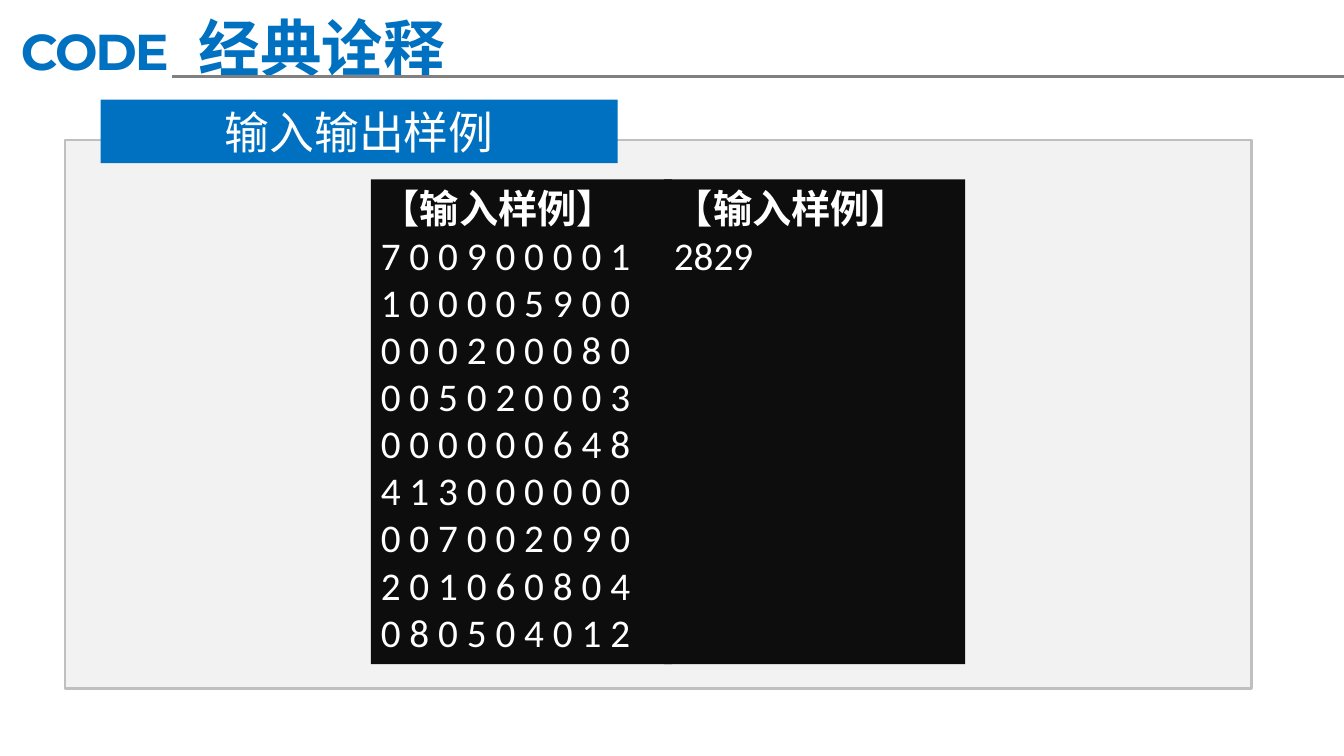
from lxml import etree
from pptx import Presentation
from pptx.dml.color import RGBColor
from pptx.enum import shapes, text
from pptx.oxml import ns
from pptx.util import Cm, Pt

BLUE = RGBColor(0x00, 0x70, 0xC0)
WHITE = RGBColor(0xFF, 0xFF, 0xFF)
PANEL = RGBColor(0xF2, 0xF2, 0xF2)
EDGE = RGBColor(0xBF, 0xBF, 0xBF)
RULE = RGBColor(0x80, 0x80, 0x80)
DARK = RGBColor(0x0D, 0x0D, 0x0D)
CJK = "Noto Sans CJK SC"

LABEL = "CODE"
TITLE = "经典诠释"
HEADING = "输入输出样例"
SAMPLES = [
    ["【输入样例】",
     "7 0 0 9 0 0 0 0 1",
     "1 0 0 0 0 5 9 0 0",
     "0 0 0 2 0 0 0 8 0",
     "0 0 5 0 2 0 0 0 3",
     "0 0 0 0 0 0 6 4 8",
     "4 1 3 0 0 0 0 0 0",
     "0 0 7 0 0 2 0 9 0",
     "2 0 1 0 6 0 8 0 4",
     "0 8 0 5 0 4 0 1 2"],
    ["【输入样例】", "2829"],
]
SAMPLE_LEFT, SAMPLE_STEP = 9.35, 7.39


def write(sp, lines, font, size, color, bold_lines=0,
          align=text.PP_ALIGN.LEFT, anchor=text.MSO_ANCHOR.TOP):
    tf = sp.text_frame
    tf.text = "\n".join(lines)
    tf.word_wrap = True
    tf.auto_size = text.MSO_AUTO_SIZE.NONE
    tf.vertical_anchor = anchor
    for i, p in enumerate(tf.paragraphs):
        p.alignment = align
        r = p.runs[0]
        r.font.name = font
        r.font.size = Pt(size)
        r.font.bold = i < bold_lines
        r.font.color.rgb = color
        ea = etree.SubElement(r.font._element, ns.qn("a:ea"))
        ea.set("typeface", font)
    return tf


def add_box(s, left, top, width, height, fill, edge=None):
    sp = s.shapes.add_shape(shapes.MSO_SHAPE.RECTANGLE,
                            Cm(left), Cm(top), Cm(width), Cm(height))
    sp.shadow.inherit = False
    sp.fill.solid()
    sp.fill.fore_color.rgb = fill
    if edge is None:
        sp.line.fill.background()
    else:
        sp.line.color.rgb = edge
        sp.line.width = Pt(1.5)
    return sp


def add_header(s):
    sp = s.shapes.add_textbox(Cm(0.2), Cm(0.33), Cm(4.72), Cm(1.88))
    tf = write(sp, [LABEL], "Montserrat", 36, BLUE, 1)
    tf.margin_left = tf.margin_right = Cm(0.33)
    tf.margin_top = tf.margin_bottom = Cm(0.18)
    tf.paragraphs[0].runs[0].font._element.set("spc", "-150")

    rule = s.shapes.add_connector(shapes.MSO_CONNECTOR.STRAIGHT,
                                  Cm(4.34), Cm(1.93), Cm(33.88), Cm(1.93))
    rule.line.color.rgb = RULE
    rule.line.width = Pt(2)
    etree.SubElement(rule._element.spPr, ns.qn("a:effectLst"))

    title = s.shapes.title
    title.left, title.top, title.width, title.height = (
        Cm(4.75), Cm(0.13), Cm(11.99), Cm(2.13))
    write(title, [TITLE], CJK, 44, BLUE, 1)


def main():
    prs = Presentation()
    prs.slide_width, prs.slide_height = Cm(33.88), Cm(19.05)
    s = prs.slides.add_slide(prs.slide_layouts[5])
    add_header(s)
    add_box(s, 1.63, 3.53, 29.92, 13.82, PANEL, EDGE)
    heading = add_box(s, 2.54, 2.51, 13.03, 1.6, BLUE)
    write(heading, [HEADING], CJK, 32, WHITE,
          align=text.PP_ALIGN.CENTER, anchor=text.MSO_ANCHOR.MIDDLE)
    for i, lines in enumerate(SAMPLES):
        sample = add_box(s, SAMPLE_LEFT + i * SAMPLE_STEP, 4.52, 7.59, 12.22, DARK)
        write(sample, lines, "Calibri", 28, WHITE, 1)
    prs.save("out.pptx")


if __name__ == "__main__":
    main()
